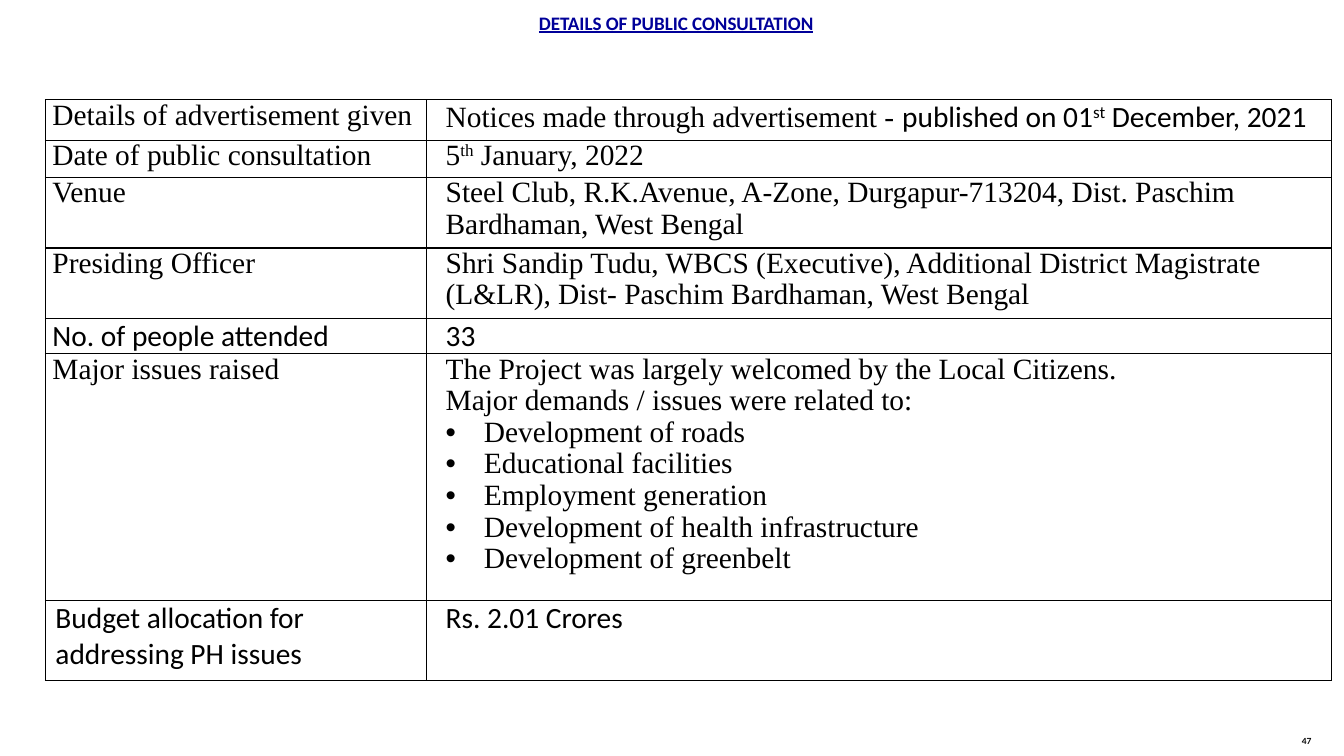
from lxml.etree import SubElement
from pptx import Presentation
from pptx.dml.color import RGBColor
from pptx.enum.text import MSO_ANCHOR, PP_ALIGN
from pptx.oxml.ns import qn
from pptx.util import Inches, Pt

COLORS = {"title": "000099", "text": "000000", "border": "000000"}
SERIF, SANS = "Times New Roman", "Calibri"
COLUMNS = [3.78, 8.98]
ISSUES = ["Development of roads", "Educational facilities", "Employment generation",
          "Development of health infrastructure", "Development of greenbelt"]

# Each row: height, label font, label, then answer paragraphs made of (text, font, raised) runs
ROWS = [
    (0.4, SERIF, "Details of advertisement given",
     [[("Notices made through advertisement - ", SERIF, False),
       ("published on 01", SANS, False), ("st", SANS, True),
       (" December, 2021", SANS, False)]]),
    (0.37, SERIF, "Date of public consultation",
     [[("5", SERIF, False), ("th", SERIF, True), (" January, 2022", SERIF, False)]]),
    (0.7, SERIF, "Venue",
     [[("Steel Club, R.K.Avenue, A-Zone, Durgapur-713204, Dist. Paschim "
        "Bardhaman, West Bengal", SERIF, False)]]),
    (0.7, SERIF, "Presiding Officer",
     [[("Shri Sandip Tudu, WBCS (Executive), Additional District Magistrate "
        "(L&LR), Dist- Paschim Bardhaman, West Bengal", SERIF, False)]]),
    (0.35, SANS, "No. of people attended", [[("33", SANS, False)]]),
    (2.45, SERIF, "Major issues raised",
     [[(text, SERIF, False)] for text in
      ["The Project was largely welcomed by the Local Citizens.",
       "Major demands / issues were related to:"] + ISSUES]),
    (0.79, SANS, "Budget allocation for addressing PH issues",
     [[("Rs. 2.01 Crores", SANS, False)]]),
]


def style_run(r, font, size, color, bold=False):
    """Set the font, size, colour and weight of a run."""
    r.font.name = font
    r.font.size = Pt(size)
    r.font.bold = bold
    r.font.color.rgb = RGBColor.from_string(COLORS[color])


def add_label(s, box, text, font, size, color, bottom=0.05):
    """Place one centred bold line in a box and return its run."""
    sp = s.shapes.add_textbox(*(Inches(v) for v in box))
    tf = sp.text_frame
    tf.word_wrap = True
    tf.vertical_anchor = MSO_ANCHOR.MIDDLE
    tf.margin_top, tf.margin_bottom = Inches(0.05), Inches(bottom)
    p = tf.paragraphs[0]
    p.text = text
    p.alignment = PP_ALIGN.CENTER
    r = p.runs[0]
    style_run(r, font, size, color, True)
    return r


def add_borders(cell):
    """Draw a thin line on every side of a cell."""
    tcPr = cell._tc.get_or_add_tcPr()
    for i, side in enumerate(("lnL", "lnR", "lnT", "lnB")):
        ln = SubElement(tcPr, qn(f"a:{side}"), w=str(Pt(1)))
        tcPr.insert(i, ln)
        fill = SubElement(ln, qn("a:solidFill"))
        SubElement(fill, qn("a:srgbClr"), val=COLORS["border"])


def fill_cell(cell, paragraphs, indent, spacing):
    """Write paragraphs of runs into a bordered cell, bulleting the issues."""
    cell.margin_left = cell.margin_right = cell.margin_top = cell.margin_bottom = 0
    cell.fill.background()
    add_borders(cell)
    tf = cell.text_frame
    for i, runs in enumerate(paragraphs):
        p = tf.add_paragraph() if i else tf.paragraphs[0]
        p.line_spacing = spacing
        pPr = p._p.get_or_add_pPr()
        bulleted = runs[0][0] in ISSUES
        hang = 0.38 if bulleted else 0
        pPr.set("marL", str(Inches(indent + hang)))
        pPr.set("indent", str(Inches(-hang)))
        if bulleted:
            SubElement(pPr, qn("a:buFont"), typeface="Arial")
            SubElement(pPr, qn("a:buChar"), char="•")
        for text, font, raised in runs:
            r = p.add_run()
            r.text = text
            style_run(r, font, 21, "text")
            if raised:
                r._r.get_or_add_rPr().set("baseline", "30000")


def add_consultation_table(s, left, top):
    """Build the two-column table of consultation details."""
    height = sum(row[0] for row in ROWS)
    table = s.shapes.add_table(len(ROWS), 2, Inches(left), Inches(top),
                               Inches(sum(COLUMNS)), Inches(height)).table
    table.first_row = table.horz_banding = False
    for column, width in zip(table.columns, COLUMNS):
        column.width = Inches(width)
    for i, (row_height, font, label, answer) in enumerate(ROWS):
        last = i == len(ROWS) - 1
        spacing = 1.0 if last else 0.97
        table.rows[i].height = Inches(row_height)
        fill_cell(table.cell(i, 0), [[(label, font, False)]], 0.1 if last else 0.07, spacing)
        fill_cell(table.cell(i, 1), answer, 0.19, spacing)
    table.cell(0, 1).text_frame.paragraphs[0].alignment = PP_ALIGN.JUSTIFY


def main():
    """Create the slide and save it."""
    prs = Presentation()
    prs.slide_width, prs.slide_height = Inches(13.33), Inches(7.5)
    s = prs.slides.add_slide(prs.slide_layouts[6])
    title = add_label(s, (0.68, 0, 12.05, 0.5), "DETAILS OF PUBLIC CONSULTATION",
                      SANS, 13.6, "title", 0.1)
    title.font.underline = True
    add_consultation_table(s, 0.45, 0.99)
    add_label(s, (12.65, 7.24, 0.62, 0.27), "47", "Lato", 6, "text", 0.1)
    prs.save("out.pptx")


if __name__ == "__main__":
    main()
